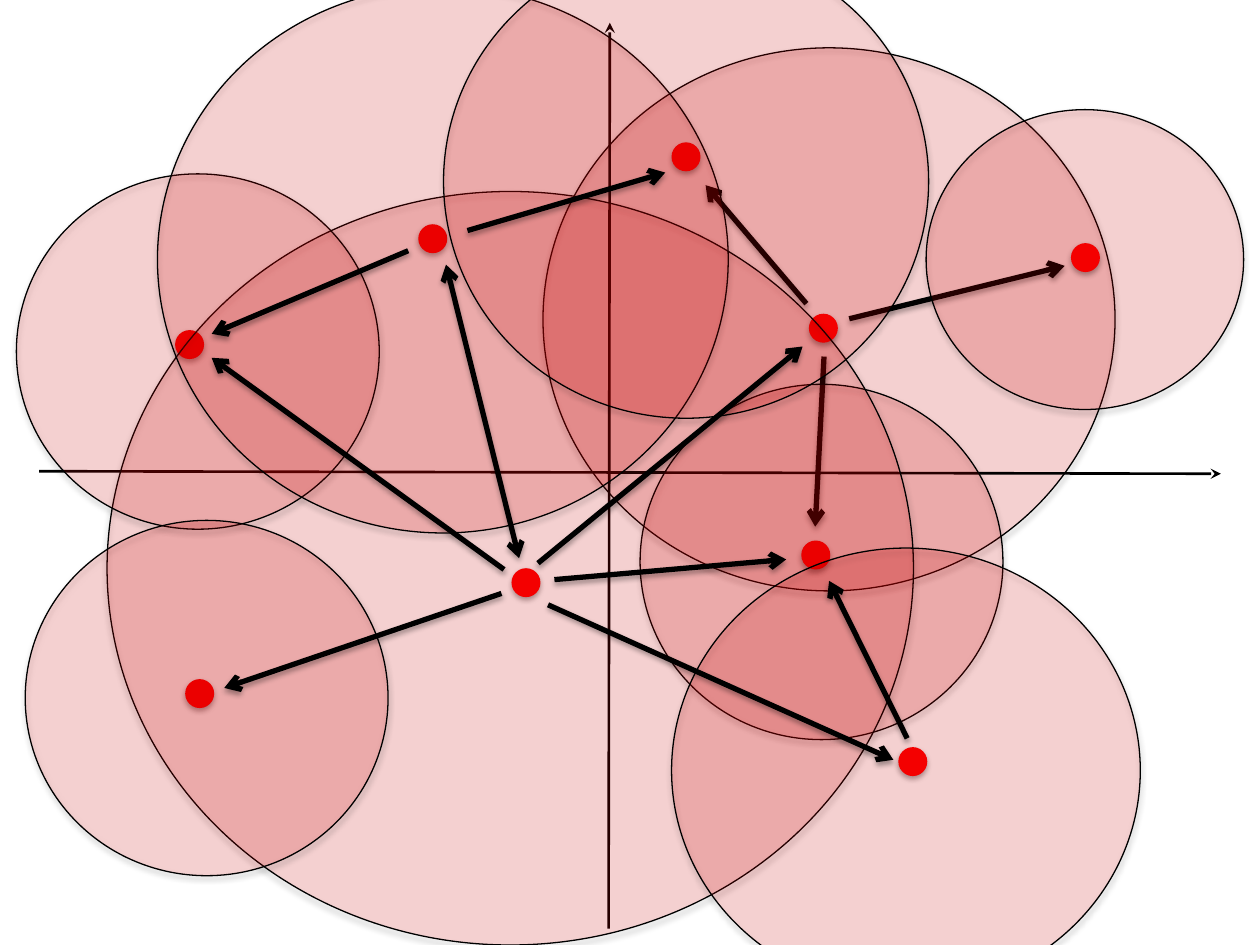
from lxml.etree import SubElement
from pptx import Presentation
from pptx.dml.color import RGBColor
from pptx.enum.shapes import MSO_CONNECTOR as Connector, MSO_SHAPE as Shape
from pptx.oxml.ns import qn
from pptx.util import Inches, Pt

COLORS = {"node": "FF0000", "ink": "000000"}
NODE_SIZE = 0.23
RANGE_OPACITY = 14

# Left, top, width, height of each node's transmission range
BACK_RANGE = (4.31, 0.38, 4.54, 4.31)
FRONT_RANGES = [
    (5.08, 3.05, 2.88, 2.82),
    (0.85, 1.52, 6.40, 5.98),
    (0.13, 1.38, 2.88, 2.82),
    (0.20, 4.13, 2.88, 2.82),
    (1.25, -0.11, 4.53, 4.34),
    (7.35, 0.87, 2.52, 2.38),
    (5.33, 4.35, 3.72, 3.53),
    (3.52, -0.44, 3.85, 3.76),
]
# Left, top of each node
NODES = [
    (5.33, 1.13), (1.39, 2.62), (3.32, 1.78), (8.50, 1.93), (4.06, 4.51),
    (6.42, 2.49), (6.36, 4.29), (1.47, 5.39), (7.13, 5.93),
]
AXES = [((0.31, 3.74), (9.69, 3.76)), ((4.83, 7.37), (4.84, 0.18))]
# Receiving end (with the arrowhead), sending end
BACK_LINKS = [
    ((8.45, 2.11), (6.74, 2.53)),
    ((5.60, 1.47), (6.40, 2.41)),
    ((6.47, 4.18), (6.54, 2.83)),
]
FRONT_LINKS = [
    ((5.28, 1.37), (3.71, 1.83)),
    ((6.24, 4.44), (4.40, 4.60)),
    ((6.58, 4.61), (7.20, 5.86)),
    ((1.68, 2.65), (3.24, 1.99)),
    ((1.78, 5.46), (3.98, 4.71)),
    ((7.09, 6.03), (4.35, 4.80)),
    ((1.68, 2.84), (4.00, 4.52)),
    ((6.37, 2.75), (4.27, 4.47)),
]
TWO_WAY_LINK = ((4.12, 4.43), (3.54, 2.10))


def color(name):
    return RGBColor.from_string(COLORS[name])


def set_opacity(color_element, percent):
    SubElement(color_element, qn("a:alpha"), val=str(percent * 1000))


def add_shadow(effects):
    """Put a soft downward shadow into an empty effect list."""
    shadow = SubElement(effects, qn("a:outerShdw"), blurRad=str(Pt(3.1)),
                        dist=str(Pt(1.8)), dir="5400000", rotWithShape="0")
    tint = SubElement(shadow, qn("a:srgbClr"), val=COLORS["ink"])
    set_opacity(tint, 35)


def add_circle(slide, left, top, width, height):
    circle = slide.shapes.add_shape(
        Shape.OVAL, Inches(left), Inches(top), Inches(width), Inches(height))
    circle.fill.solid()
    circle.fill.fore_color.rgb = color("node")
    circle.shadow.inherit = False
    add_shadow(circle._element.spPr.find(qn("a:effectLst")))
    return circle


def add_range(slide, box):
    area = add_circle(slide, *box)
    fill = area._element.spPr.find(qn("a:solidFill"))
    set_opacity(fill[0], RANGE_OPACITY)
    area.line.color.rgb = color("ink")
    area.line.width = Pt(0.75)


def add_node(slide, left, top):
    node = add_circle(slide, left, top, NODE_SIZE, NODE_SIZE)
    node.line.fill.background()


def add_line(slide, ends, width, **arrowheads):
    """Draw a line with headEnd / tailEnd arrowheads; return its effect list."""
    (x1, y1), (x2, y2) = ends
    line = slide.shapes.add_connector(
        Connector.STRAIGHT, Inches(x1), Inches(y1), Inches(x2), Inches(y2))
    line.line.color.rgb = color("ink")
    line.line.width = Pt(width)
    outline = line.line._get_or_add_ln()
    for end, style in arrowheads.items():
        SubElement(outline, qn(f"a:{end}"), type=style)
    return SubElement(line._element.spPr, qn("a:effectLst"))


def add_axis(slide, ends):
    add_line(slide, ends, 1.5, tailEnd="stealth")


def add_link(slide, ends, **other_arrowhead):
    add_shadow(add_line(slide, ends, 3, headEnd="arrow", **other_arrowhead))


def main():
    deck = Presentation()
    deck.slide_width, deck.slide_height = Inches(10), Inches(7.5)
    slide = deck.slides.add_slide(deck.slide_layouts[6])

    add_range(slide, BACK_RANGE)
    for axis in AXES:
        add_axis(slide, axis)
    for node in NODES:
        add_node(slide, *node)
    for link in BACK_LINKS:
        add_link(slide, link)
    for box in FRONT_RANGES:
        add_range(slide, box)
    for link in FRONT_LINKS:
        add_link(slide, link)
    add_link(slide, TWO_WAY_LINK, tailEnd="arrow")

    deck.save("out.pptx")


if __name__ == "__main__":
    main()
